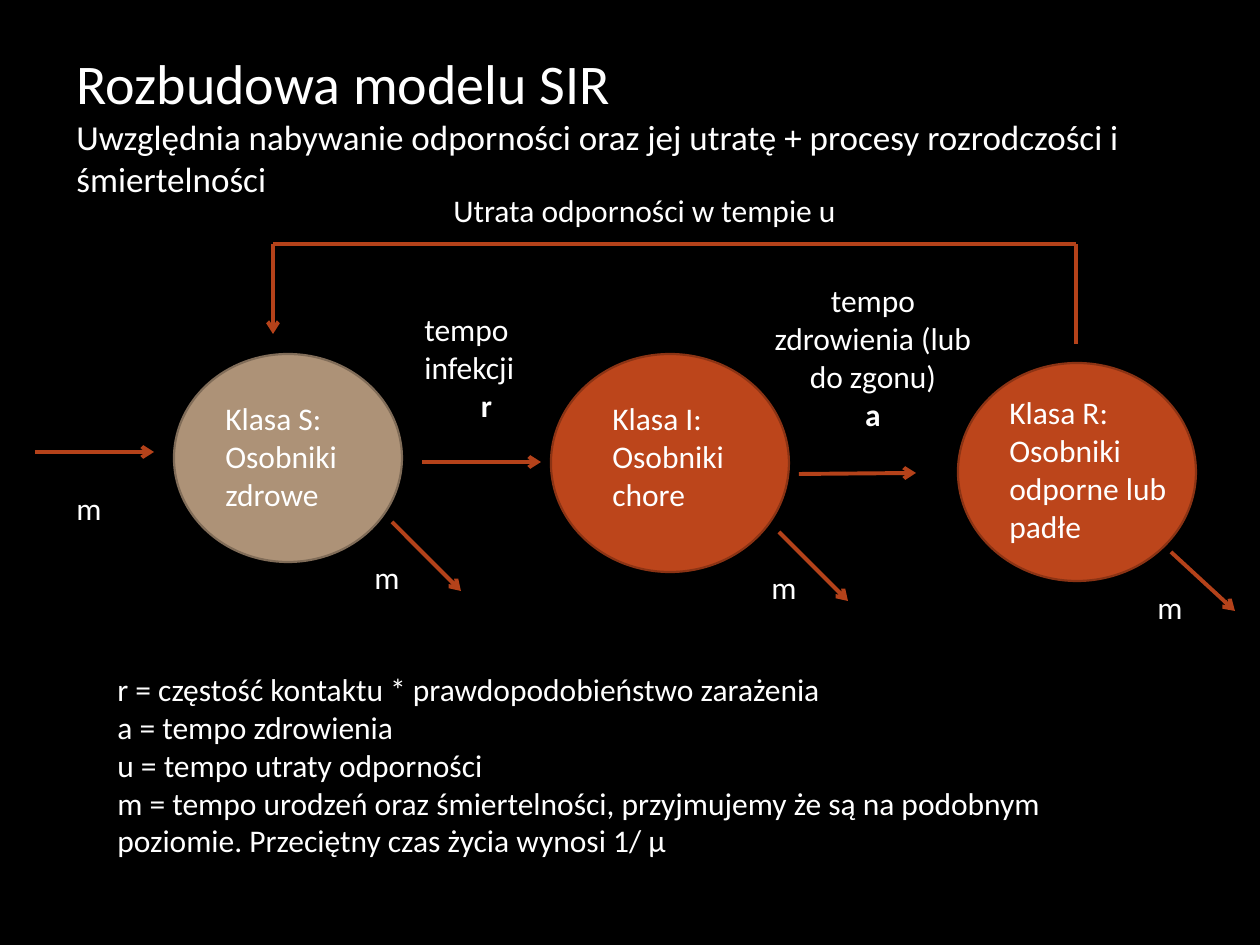
import pptx
import pptx.dml.color
import pptx.enum.shapes
import pptx.enum.text
import pptx.oxml
import pptx.oxml.ns
import pptx.util

RGBColor = pptx.dml.color.RGBColor
BLACK = RGBColor(0x00, 0x00, 0x00)
WHITE = RGBColor(0xFF, 0xFF, 0xFF)
TAN = RGBColor(0xAD, 0x92, 0x77)
TAN_EDGE = RGBColor(0x80, 0x6C, 0x58)
RUST = RGBColor(0xBC, 0x45, 0x1B)
RUST_EDGE = RGBColor(0x8B, 0x33, 0x14)
ARROW = RGBColor(0xB4, 0x42, 0x1A)

FONT = "Calibri"
LEFT = pptx.enum.text.PP_ALIGN.LEFT
CENTER = pptx.enum.text.PP_ALIGN.CENTER
PX = pptx.util.Inches(1) // 126


def add_text(page, box, lines, sizes=(18,), aligns=(LEFT,), bold_last=False):
    """Add one paragraph per line; the last size and alignment carry on."""
    frame = page.shapes.add_textbox(*(n * PX for n in box)).text_frame
    frame.word_wrap = True
    frame.text = "\n".join(lines)
    for index, para in enumerate(frame.paragraphs):
        para.alignment = aligns[min(index, len(aligns) - 1)]
        for span in para.runs:
            span.font.name = FONT
            span.font.size = pptx.util.Pt(sizes[min(index, len(sizes) - 1)])
            span.font.color.rgb = WHITE
            span.font.bold = bold_last and index == len(lines) - 1


def add_line(page, start, end, arrow=True):
    line = page.shapes.add_connector(
        pptx.enum.shapes.MSO_CONNECTOR.STRAIGHT,
        *(n * PX for n in (*start, *end)))
    line.line.color.rgb = ARROW
    line.line.width = pptx.util.Pt(2.25)
    if arrow:
        tail = pptx.oxml.parse_xml(
            f'<a:tailEnd {pptx.oxml.ns.nsdecls("a")} type="arrow"/>')
        line.line._get_or_add_ln().append(tail)
    effects = pptx.oxml.parse_xml(
        f'<a:effectLst {pptx.oxml.ns.nsdecls("a")}/>')
    line._element.spPr.append(effects)


def add_class(page, box, fill, edge, label, lines, death, death_label):
    """Draw a class circle, its label and its death arrow, offset from the box."""
    left, top = box[:2]
    circle = page.shapes.add_shape(
        pptx.enum.shapes.MSO_SHAPE.OVAL, *(n * PX for n in box))
    circle.shadow.inherit = False
    circle.fill.solid()
    circle.fill.fore_color.rgb = fill
    circle.line.color.rgb = edge
    circle.line.width = pptx.util.Pt(1.25)

    label_x, label_y, label_height = label
    add_text(page, (left + label_x, top + label_y, 228, label_height), lines)
    start_x, start_y, run, fall = death
    start = (left + start_x, top + start_y)
    add_line(page, start, (start[0] + run, start[1] + fall))
    add_text(page, (left + death_label[0], top + death_label[1], 49, 50), ["m"])


def add_heading(page, box):
    add_text(page, box, [
        "Rozbudowa modelu SIR",
        "Uwzględnia nabywanie odporności oraz jej utratę + procesy "
        "rozrodczości i śmiertelności",
    ], sizes=(32, 20))


def add_classes(page, box):
    left, top = box[:2]
    add_class(page, (left, top, 228, 208), TAN, TAN_EDGE, (39, 39, 127),
              ["Klasa S:", "Osobniki zdrowe"], (218, 168, 69, 69), (188, 198))
    add_class(page, (left + 377, top, 238, 218), RUST, RUST_EDGE,
              (49, 39, 127), ["Klasa I:", "Osobniki", "chore"],
              (228, 178, 69, 69), (208, 208))
    add_class(page, (left + 784, top + 9, 238, 218), RUST, RUST_EDGE,
              (39, 24, 165), ["Klasa R:", "Osobniki odporne lub padłe"],
              (213, 189, 64, 59), (187, 219))


def add_flows(page, box):
    """Draw births, infection and recovery from left to right."""
    left, top = box[:2]
    add_line(page, (left, top + 177), (left + 119, top + 177))
    add_text(page, (left + 29, top + 208, 49, 50), ["m"])

    add_line(page, (left + 387, top + 187), (left + 506, top + 187))
    add_text(page, (left + 377, top + 29, 149, 127),
             ["tempo", "infekcji", "r"],
             aligns=(LEFT, LEFT, CENTER), bold_last=True)

    add_line(page, (left + 764, top + 199), (left + 881, top + 198))
    add_text(page, (left + 724, top, 228, 165),
             ["tempo zdrowienia (lub do zgonu)", "a"],
             aligns=(CENTER,), bold_last=True)


def add_immunity_loss(page, box):
    """Draw the path from class R back to class S, with its caption."""
    left, top, width, height = box
    right, bar = left + width, top + 59
    add_line(page, (right, top + height), (right, bar), arrow=False)
    add_line(page, (right, bar), (left, bar), arrow=False)
    add_line(page, (left, bar), (left, bar + 90))
    add_text(page, (left + 168, top, 496, 50), ["Utrata odporności w tempie u"])


def add_legend(page, box):
    add_text(page, box, [
        "r = częstość kontaktu * prawdopodobieństwo zarażenia",
        "a = tempo zdrowienia",
        "u = tempo utraty odporności",
        "m = tempo urodzeń oraz śmiertelności, przyjmujemy że są na podobnym "
        "poziomie. Przeciętny czas życia wynosi 1/ µ",
    ])


def main():
    deck = pptx.Presentation()
    deck.slide_width = 1260 * PX
    deck.slide_height = 945 * PX
    page = deck.slides.add_slide(deck.slide_layouts[6])
    page.background.fill.solid()
    page.background.fill.fore_color.rgb = BLACK

    add_classes(page, (174, 354, 1061, 278))
    add_flows(page, (35, 275, 952, 258))
    add_legend(page, (105, 664, 1022, 204))
    add_heading(page, (64, 42, 1142, 165))
    add_immunity_loss(page, (273, 185, 803, 159))
    deck.save("out.pptx")


if __name__ == "__main__":
    main()
